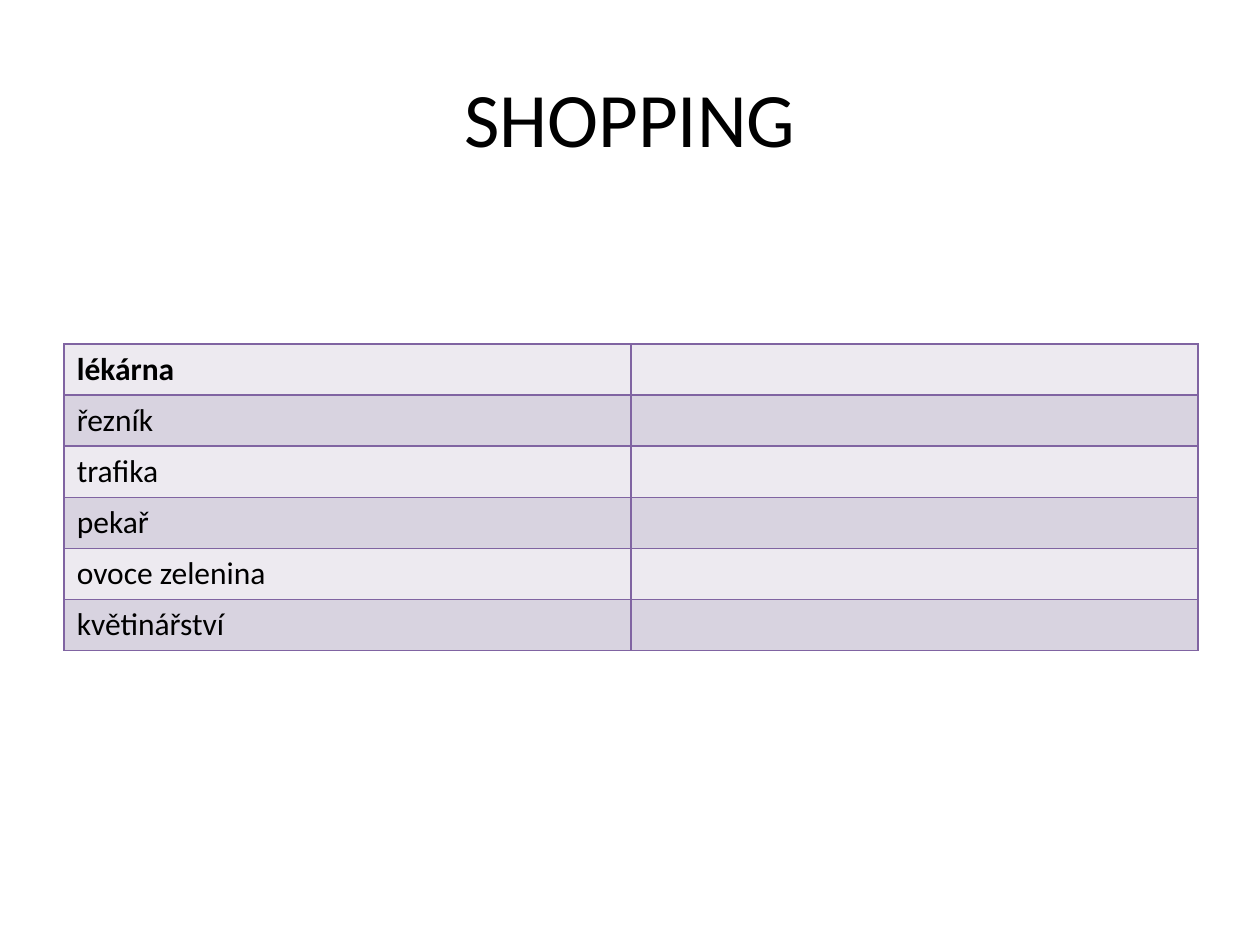
from dataclasses import dataclass

from lxml import etree
from pptx import Presentation
from pptx.dml.color import RGBColor
from pptx.enum import text
from pptx.oxml.ns import qn
from pptx.util import Inches, Pt

FONT = "Calibri"
BLACK = "000000"
BORDER = "8064A2"
BANDS = ("EDEAF0", "D8D3E0")
COLUMNS = 2
ROW_HEIGHT = 0.405


@dataclass
class Shop:
    name: str
    bold: bool = False


SHOPS = [
    Shop("lékárna", bold=True),
    Shop("řezník"),
    Shop("trafika"),
    Shop("pekař"),
    Shop("ovoce zelenina"),
    Shop("květinářství"),
]


def color(value: str) -> RGBColor:
    return RGBColor.from_string(value)


def format_font(font, size: float, bold: bool = False) -> None:
    font.name = FONT
    font.size = Pt(size)
    font.bold = bold
    font.color.rgb = color(BLACK)


def add_borders(cell, value: str, width: float) -> None:
    """Line all four sides; borders must precede the fill in tcPr."""
    tc_pr = cell._tc.get_or_add_tcPr()
    for i, side in enumerate(("a:lnL", "a:lnR", "a:lnT", "a:lnB")):
        ln = etree.Element(qn(side), w=str(Pt(width)))
        fill = etree.SubElement(ln, qn("a:solidFill"))
        etree.SubElement(fill, qn("a:srgbClr"), val=value)
        tc_pr.insert(i, ln)


def format_cell(cell, fill: str, label: str, bold: bool) -> None:
    cell.fill.solid()
    cell.fill.fore_color.rgb = color(fill)
    add_borders(cell, BORDER, 1)
    cell.text = label
    p = cell.text_frame.paragraphs[0]
    for item in (p, *p.runs):
        format_font(item.font, 18, bold)


def add_shop_table(slide, shops: list[Shop]) -> None:
    table = slide.shapes.add_table(
        len(shops), COLUMNS, Inches(0.51), Inches(2.73),
        Inches(9), Inches(ROW_HEIGHT * len(shops))).table
    for i, shop in enumerate(shops):
        fill = BANDS[i % len(BANDS)]
        # The second column stays blank for the answers
        for j, label in enumerate((shop.name, "")):
            format_cell(table.cell(i, j), fill, label, shop.bold)


def add_title(slide, title: str) -> None:
    sp = slide.shapes.title
    sp.left, sp.top = Inches(0.5), Inches(0.3)
    sp.width, sp.height = Inches(9), Inches(1.25)
    tf = sp.text_frame
    tf.text = title
    tf.vertical_anchor = text.MSO_ANCHOR.MIDDLE
    p = tf.paragraphs[0]
    p.alignment = text.PP_ALIGN.CENTER
    format_font(p.runs[0].font, 44)


def main() -> None:
    prs = Presentation()
    prs.slide_width, prs.slide_height = Inches(10), Inches(7.5)
    slide = prs.slides.add_slide(prs.slide_layouts[5])  # title only
    add_title(slide, "SHOPPING")
    add_shop_table(slide, SHOPS)
    prs.save("out.pptx")


if __name__ == "__main__":
    main()
